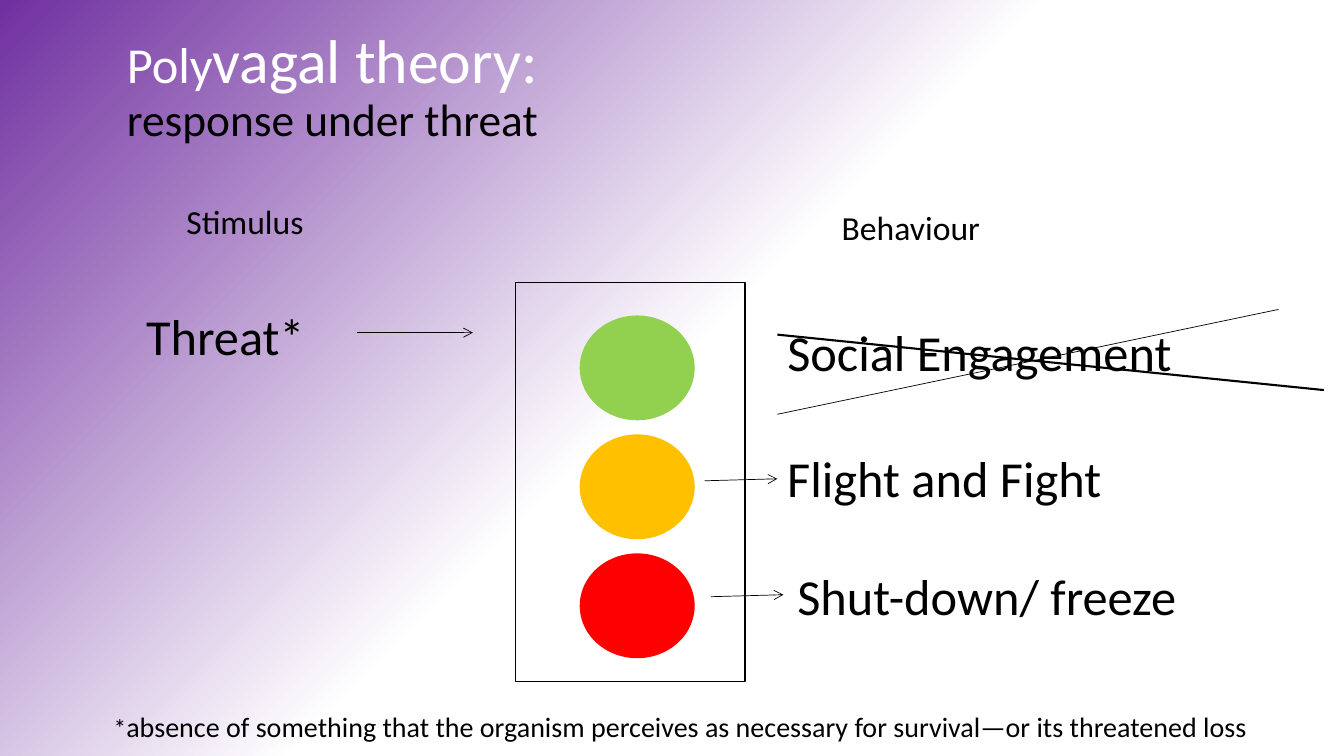
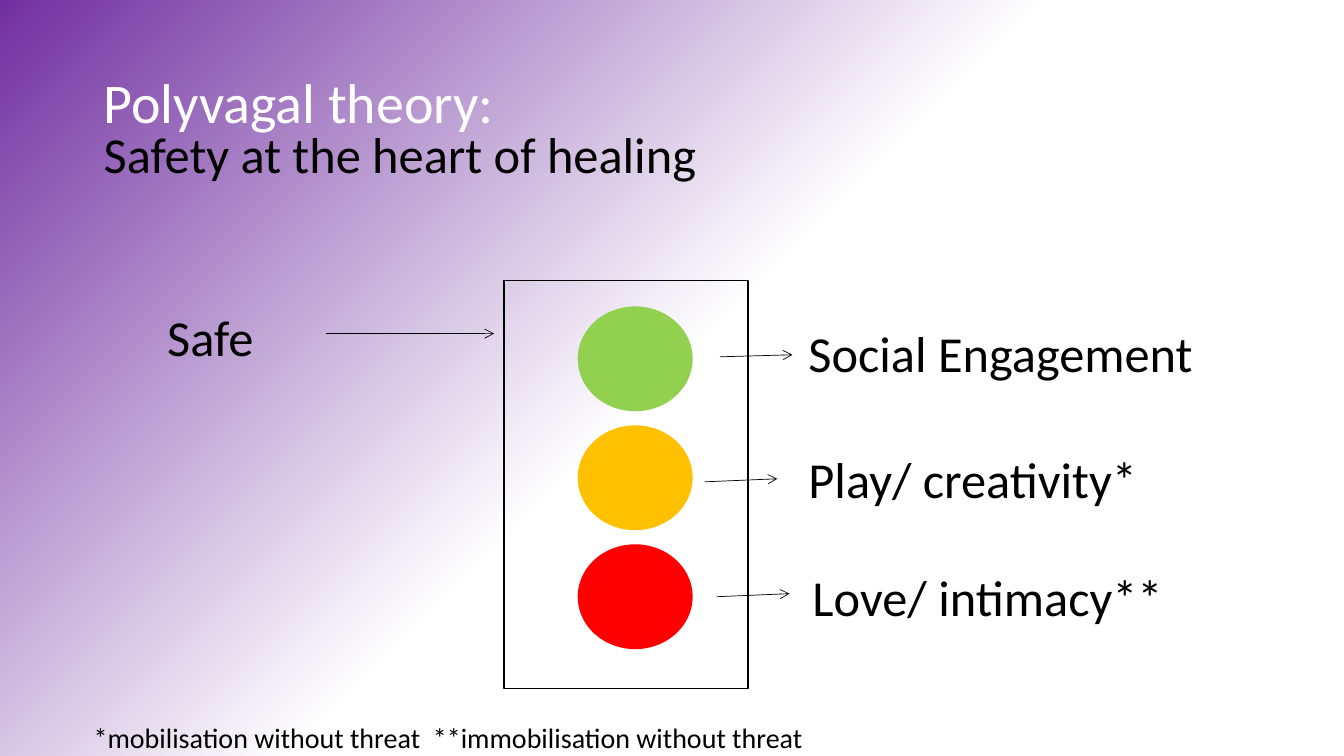
from lxml import etree
from pptx import Presentation
from pptx.dml.color import RGBColor
from pptx.enum.shapes import MSO_CONNECTOR, MSO_SHAPE
from pptx.enum.text import MSO_ANCHOR
from pptx.oxml import parse_xml
from pptx.oxml.ns import qn
from pptx.util import Pt

PX = 9144  # one px is a hundredth of an inch
STRAIGHT = MSO_CONNECTOR.STRAIGHT
RECTANGLE, OVAL = MSO_SHAPE.RECTANGLE, MSO_SHAPE.OVAL
TOP, MIDDLE, BOTTOM = MSO_ANCHOR.TOP, MSO_ANCHOR.MIDDLE, MSO_ANCHOR.BOTTOM

FONT = "Calibri"
BLACK, WHITE, PURPLE = "000000", "FFFFFF", "7030A0"
LAMP_COLOURS = ["92D050", "FFC000", "FF0000"]  # green, amber, red
LAMP_WIDTH, LAMP_HEIGHT, LAMP_PITCH = 114, 104, 118
HEADING, LABEL, NOTE = 24, 36, 20
LINE_HEIGHTS = {HEADING: 50, LABEL: 71, NOTE: 44}

BACKGROUND = f"""
<p:bg xmlns:p="http://schemas.openxmlformats.org/presentationml/2006/main"
      xmlns:a="http://schemas.openxmlformats.org/drawingml/2006/main">
  <p:bgPr>
    <a:gradFill rotWithShape="1">
      <a:gsLst>
        <a:gs pos="0"><a:srgbClr val="{WHITE}"/></a:gs>
        <a:gs pos="50000"><a:srgbClr val="{WHITE}"/></a:gs>
        <a:gs pos="100000"><a:srgbClr val="{PURPLE}"/></a:gs>
      </a:gsLst>
      <a:path path="circle"><a:fillToRect l="100000" t="100000"/></a:path>
      <a:tileRect r="-100000" b="-100000"/>
    </a:gradFill>
    <a:effectLst/>
  </p:bgPr>
</p:bg>"""


def px(*lengths):
    return [length * PX for length in lengths]


def colour(value):
    return RGBColor.from_string(value)


def style_font(font, size, value=BLACK):
    font.name = FONT
    font.size = Pt(size)
    font.color.rgb = colour(value)


def add_slide(presentation):
    slide = presentation.slides.add_slide(presentation.slide_layouts[6])
    slide.element.cSld.insert(0, parse_xml(BACKGROUND))
    return slide


def add_text(slide, box, paragraphs, wrap=False, anchor=TOP, spacing=1.0):
    """Each paragraph is a list of (text, size, colour) runs."""
    frame = slide.shapes.add_textbox(*px(*box)).text_frame
    frame.word_wrap = wrap
    frame.vertical_anchor = anchor
    for index, runs in enumerate(paragraphs):
        paragraph = frame.add_paragraph() if index else frame.paragraphs[0]
        paragraph.line_spacing = spacing
        for text, size, value in runs:
            run = paragraph.add_run()
            run.text = text
            style_font(run.font, size, value)


def add_title(slide, box, paragraphs, anchor, spacing):
    add_text(slide, box, paragraphs, True, anchor, spacing)


def add_label(slide, left, top, width, text, size=LABEL):
    box = (left, top, width, LINE_HEIGHTS[size])
    add_text(slide, box, [[(text, size, BLACK)]])


def add_line(slide, start, end, weight=0.5, arrow=False):
    connector = slide.shapes.add_connector(STRAIGHT, *px(*start, *end))
    connector.line.color.rgb = colour(BLACK)
    connector.line.width = Pt(weight)
    properties = connector.element.spPr
    if arrow:
        line = properties.find(qn("a:ln"))
        etree.SubElement(line, qn("a:tailEnd"), type="arrow")
    etree.SubElement(properties, qn("a:effectLst"))


def add_arrows(slide, ends):
    for start, end in ends:
        add_line(slide, start, end, arrow=True)


def add_traffic_light(slide, housing, lamp_left, lamp_top):
    frame = slide.shapes.add_shape(RECTANGLE, *px(*housing))
    frame.shadow.inherit = False
    frame.fill.background()
    frame.line.color.rgb = colour(BLACK)
    frame.line.width = Pt(1)
    for index, value in enumerate(LAMP_COLOURS):
        top = lamp_top + index * LAMP_PITCH
        lamp = slide.shapes.add_shape(
            OVAL, *px(lamp_left, top, LAMP_WIDTH, LAMP_HEIGHT))
        lamp.shadow.inherit = False
        lamp.fill.solid()
        lamp.fill.fore_color.rgb = colour(value)
        lamp.line.fill.background()


def build_threat_slide(presentation):
    slide = add_slide(presentation)
    add_title(slide, (116, 64, 590, 86), [
        [("Poly", 36, WHITE), ("vagal theory:", 44.1, WHITE)],
        [("response under threat", 32.4, BLACK)],
    ], BOTTOM, 0.9)

    # Stimulus
    add_label(slide, 175, 194, 138, "Stimulus", HEADING)
    add_label(slide, 135, 298, 179, "Threat*")

    # Behaviour
    add_label(slide, 825, 200, 159, "Behaviour", HEADING)
    add_label(slide, 771, 314, 405, "Social Engagement")
    add_label(slide, 771, 439, 334, "Flight and Fight")
    add_label(slide, 781, 556, 401, "Shut-down/ freeze")

    add_traffic_light(slide, (511, 280, 228, 396), 575, 313)
    add_arrows(slide, [((354, 330), (469, 330)),
                       ((699, 477), (771, 475)),
                       ((705, 592), (777, 590))])

    # Social engagement crossed out
    add_line(slide, (771, 332), (1313, 387), weight=1.5)
    add_line(slide, (771, 411), (1268, 307))

    # Footnote
    add_text(slide, (103, 699, 1156, 44), [[
        ("*", 18, BLACK),
        ("absence of something that the organism perceives as necessary "
         "for survival—or its threatened loss", NOTE, BLACK),
    ]])


def build_safety_slide(presentation):
    slide = add_slide(presentation)
    add_title(slide, (93, 71, 793, 120), [
        [("Polyvagal theory:", 40, WHITE)],
        [("Safety at the heart of healing", 36, BLACK)],
    ], MIDDLE, 0.8)

    # Stimulus and behaviour
    add_label(slide, 156, 299, 106, "Safe")
    add_label(slide, 792, 315, 405, "Social Engagement")
    add_label(slide, 792, 440, 349, "Play/ creativity*")
    add_label(slide, 796, 557, 371, "Love/ intimacy**")

    add_traffic_light(slide, (500, 278, 242, 405), 573, 304)
    add_arrows(slide, [((323, 331), (490, 331)),
                       ((714, 354), (786, 352)),
                       ((699, 478), (771, 475)),
                       ((711, 592), (783, 589))])

    # Footnote
    add_label(slide, 83, 710, 724,
              "*mobilisation without threat  **immobilisation without threat",
              NOTE)


def main():
    presentation = Presentation()
    presentation.slide_width, presentation.slide_height = px(1333, 750)
    build_threat_slide(presentation)
    build_safety_slide(presentation)
    presentation.save("out.pptx")


if __name__ == "__main__":
    main()
